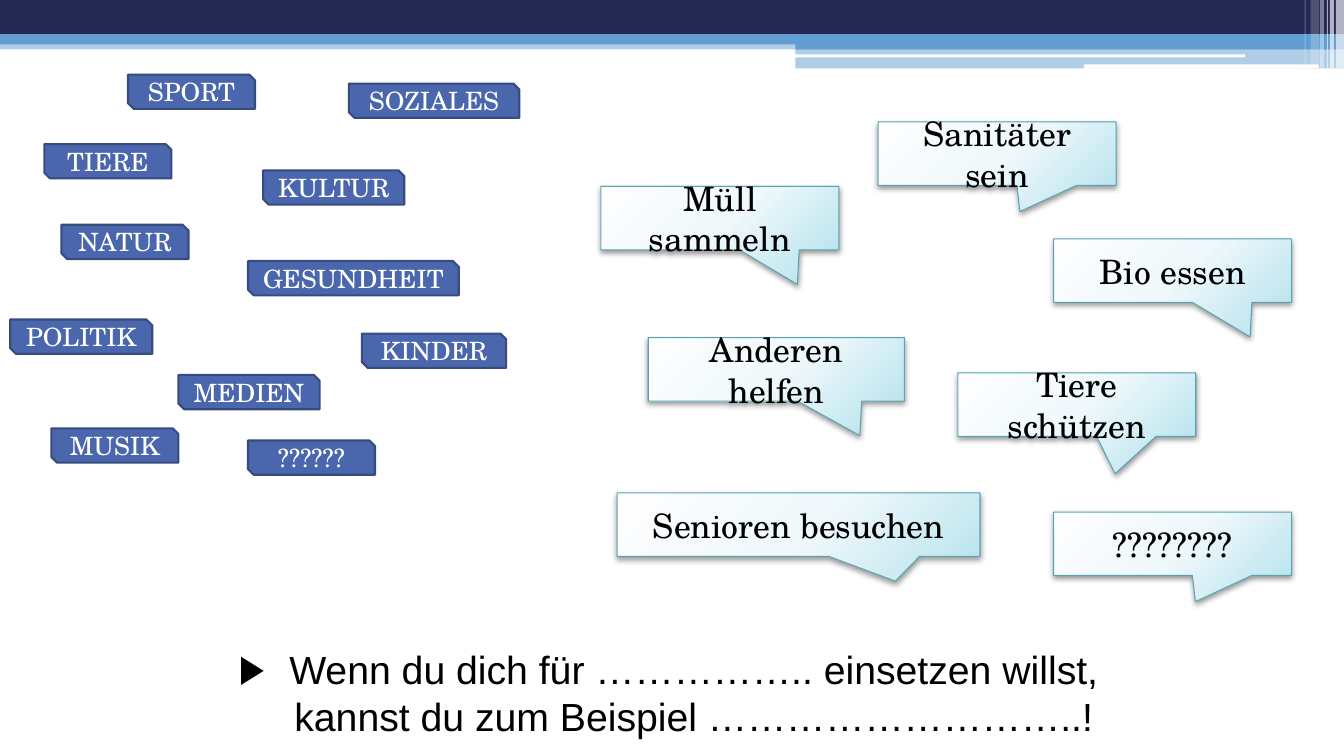
from lxml.etree import SubElement
from pptx import Presentation
from pptx.dml.color import RGBColor
from pptx.enum.shapes import MSO_SHAPE
from pptx.enum.text import MSO_ANCHOR, MSO_AUTO_SIZE, PP_ALIGN
from pptx.oxml import parse_xml
from pptx.oxml.ns import nsdecls, qn
from pptx.util import Inches, Pt

NAVY = RGBColor(0x24, 0x28, 0x52)
SKY = RGBColor(0x62, 0x9D, 0xD1)
BLUE = RGBColor(0x4A, 0x66, 0xAC)
EDGE = RGBColor(0x37, 0x4B, 0x7F)
TEAL = RGBColor(0x5A, 0xA2, 0xAE)
WHITE = RGBColor(0xFF, 0xFF, 0xFF)
BLACK = RGBColor(0, 0, 0)
STOPS = ((0, RGBColor(0xFE, 0xFE, 0xFF)),
         (55, RGBColor(0xEF, 0xF8, 0xFB)),
         (100, RGBColor(0xBC, 0xE5, 0xEF)))
CELL = 0.1  # inches per grid column and row

TAG_FONT = {"name": "TeX Gyre Schola", "size": Pt(18)}
CALL_FONT = {"name": "TeX Gyre Schola", "size": Pt(24)}
TASK_FONT = {"name": "Arial", "size": Pt(28)}

GRAD = (f'<a:gradFill {nsdecls("a")} rotWithShape="1"><a:gsLst>'
        + "".join(f'<a:gs pos="{pos * 1000}"><a:srgbClr val="{tone}"/></a:gs>'
                  for pos, tone in STOPS)
        + '</a:gsLst><a:path path="circle"><a:fillToRect l="-40000" t="-90000"'
          ' r="140000" b="190000"/></a:path></a:gradFill>')
SHADE = (f'<a:outerShdw {nsdecls("a")} blurRad="{Pt(4.1)}" dist="{Pt(2)}" '
         'dir="5400000" rotWithShape="0"><a:srgbClr val="000000">'
         '<a:alpha val="40000"/></a:srgbClr></a:outerShdw>')


class Board:
    """Places elements on a slide; lengths count grid columns and rows."""

    def __init__(self, slide):
        self.shapes = slide.shapes

    def spot(self, *cells):
        return [Inches(cell * CELL) for cell in cells]

    def form(self, kind, box):
        shape = self.shapes.add_shape(kind, *self.spot(*box))
        shape.shadow.inherit = False
        return shape

    def label(self, shape, text, style, tone):
        para = shape.text_frame.paragraphs[0]
        para.alignment = PP_ALIGN.CENTER
        run = para.add_run()
        run.text = text
        for name, value in style.items():
            setattr(run.font, name, value)
        run.font.color.rgb = tone
        return para

    def edge(self, shape, tone, width):
        shape.line.color.rgb = tone
        shape.line.width = Pt(width)

    def band(self, box, tone, alpha=100, kind=MSO_SHAPE.RECTANGLE):
        shape = self.form(kind, box)
        shape.fill.solid()
        shape.fill.fore_color.rgb = tone
        shape.line.fill.background()
        if alpha < 100:
            color = shape.element.spPr.find(".//" + qn("a:srgbClr"))
            SubElement(color, qn("a:alpha")).set("val", str(alpha * 1000))

    def tag(self, text, left, top, width):
        shape = self.form(MSO_SHAPE.SNIP_2_DIAG_RECTANGLE,
                          (left, top, width, 3.4))
        shape.fill.solid()
        shape.fill.fore_color.rgb = BLUE
        self.edge(shape, EDGE, 1.5)
        self.label(shape, text, TAG_FONT, WHITE)

    def call(self, text, left, top, width, tip):
        shape = self.form(MSO_SHAPE.RECTANGULAR_CALLOUT,
                          (left, top, width, 6.3))
        for index, value in enumerate(tip):
            shape.adjustments[index] = value
        self.edge(shape, TEAL, 0.75)
        props = shape.element.spPr
        props.find(qn("a:prstGeom")).addnext(parse_xml(GRAD))
        props.find(qn("a:effectLst")).append(parse_xml(SHADE))
        self.label(shape, text, CALL_FONT, BLACK)

    def task(self, text, box):
        shape = self.shapes.add_textbox(*self.spot(*box))
        frame = {"word_wrap": True, "vertical_anchor": MSO_ANCHOR.TOP,
                 "auto_size": MSO_AUTO_SIZE.SHAPE_TO_FIT_TEXT}
        for name, value in frame.items():
            setattr(shape.text_frame, name, value)
        para = self.label(shape, text, TASK_FONT, BLACK)
        props = para._p.get_or_add_pPr()
        props.set("marL", str(Inches(0.5)))
        props.set("indent", str(-Inches(0.5)))
        SubElement(props, qn("a:buFont")).set("typeface", "Arial")
        SubElement(props, qn("a:buChar")).set("char", "▶")


def main():
    deck = Presentation()
    deck.slide_width, deck.slide_height = Inches(13.33), Inches(7.5)
    board = Board(deck.slides.add_slide(deck.slide_layouts[6]))

    # Header bands
    for box, tone, alpha in (
            ((0, 4, 133.3, 0.9), SKY, 50),
            ((0, 0, 133.3, 3.4), NAVY, 100),
            ((0, 3.4, 133.3, 1), SKY, 100),
            ((78.9, 3.9, 54.4, 1), SKY, 100),
            ((78.9, 4.8, 54.4, 2), SKY, 50)):
        board.band(box, tone, alpha)
    for box in ((78.8, 5.4, 44.7, 0.3), (107.5, 6.4, 23.3, 0.4)):
        board.band(box, WHITE, kind=MSO_SHAPE.ROUNDED_RECTANGLE)

    # Pale stripes at the right end
    for left, width, height, alpha in (
            (132.5, 0.8, 6.8, 65), (131.9, 0.4, 6.8, 65),
            (131.6, 0.1, 6.8, 60), (130.9, 0.4, 6.8, 40),
            (130, 0.8, 6.4, 20), (129.4, 0.1, 6.4, 30)):
        board.band((left, 0, width, height), WHITE, alpha)

    # Ideas in speech bubbles
    low, side = (0.326, 1.044), (0.096, 0.912)
    for idea in (
            ("Müll sammeln", 59.6, 18.5, 23.6, low),
            ("Tiere schützen", 95, 37, 23.6, (0.161, 1.088)),
            ("Bio essen", 104.5, 23.7, 23.6, low),
            ("Anderen helfen", 64.3, 33.5, 25.4, low),
            ("Sanitäter sein", 87.1, 12.1, 23.6, side),
            ("Senioren besuchen", 61.2, 48.9, 36, (0.267, 0.89)),
            ("????????", 104.5, 50.8, 23.6, side)):
        board.call(*idea)

    # Topic tags
    for topic in (
            ("TIERE", 4.4, 14.3, 12.6), ("SPORT", 12.7, 7.4, 12.6),
            ("SOZIALES", 34.6, 8.3, 16.9), ("KULTUR", 26.1, 16.9, 14),
            ("NATUR", 6.1, 22.3, 12.6), ("GESUNDHEIT", 24.6, 25.9, 20.9),
            ("KINDER", 35.9, 33.1, 14.3), ("POLITIK", 1, 31.7, 14.1),
            ("MEDIEN", 17.7, 37.2, 14), ("MUSIK", 5.1, 42.5, 12.6),
            ("??????", 24.6, 43.7, 12.6)):
        board.tag(*topic)

    # Sentence to complete
    board.task("Wenn du dich für …………….. einsetzen willst, "
               "kannst du zum Beispiel ………………………..!", (21, 63.5, 90.6, 15.1))
    deck.save("out.pptx")


if __name__ == "__main__":
    main()
